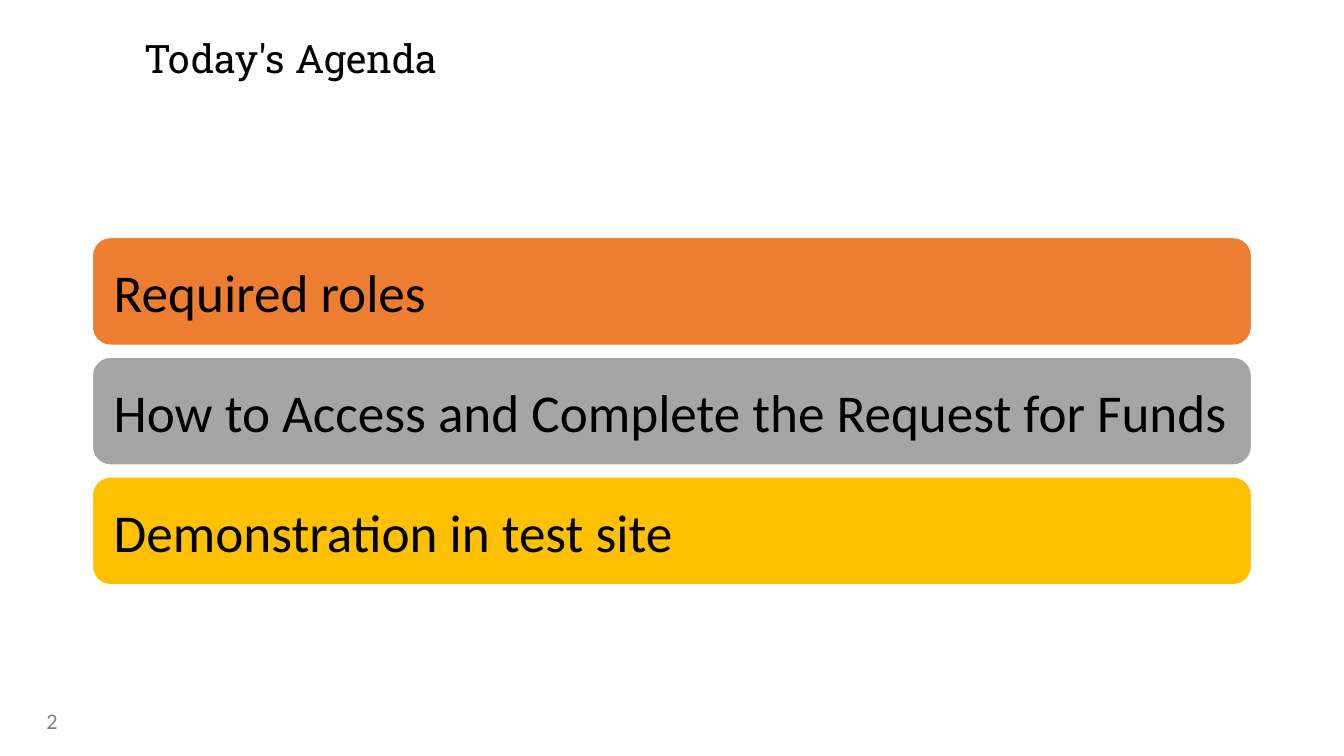
from pptx import Presentation
from pptx.dml.color import RGBColor
from pptx.enum.shapes import MSO_SHAPE
from pptx.enum.text import MSO_ANCHOR, MSO_AUTO_SIZE, PP_ALIGN
from pptx.util import Pt

ROUNDED = MSO_SHAPE.ROUNDED_RECTANGLE
TOP, MIDDLE = MSO_ANCHOR.TOP, MSO_ANCHOR.MIDDLE
LEFT = PP_ALIGN.LEFT
NO_AUTOFIT = MSO_AUTO_SIZE.NONE
TITLE_ONLY = 5

AGENDA = [
    ("Required roles", "ED7D31"),
    ("How to Access and Complete the Request for Funds", "A5A5A5"),
    ("Demonstration\u00a0in test site".replace("\u00a0", " "), "FFC000"),
]


def color(hex_value):
    return RGBColor.from_string(hex_value)


def write(frame, text, font_name, size, hex_value, anchor, inset_x, inset_y):
    """Fill a text frame with one left-aligned, formatted paragraph."""
    frame.text = text
    frame.word_wrap = True
    frame.auto_size = NO_AUTOFIT
    frame.vertical_anchor = anchor
    frame.margin_left = frame.margin_right = Pt(inset_x)
    frame.margin_top = frame.margin_bottom = Pt(inset_y)
    paragraph = frame.paragraphs[0]
    paragraph.alignment = LEFT
    font = paragraph.runs[0].font
    font.name, font.size = font_name, Pt(size)
    font.color.rgb = color(hex_value)


def add_title(slide, left, top, width, height):
    title = slide.shapes.title
    title.left, title.top = Pt(left), Pt(top)
    title.width, title.height = Pt(width), Pt(height)
    write(title.text_frame, "Today's Agenda", "Roboto Slab", 28, "000000", TOP, 0, 0)
    title.text_frame.paragraphs[0].line_spacing = 0.9


def add_agenda(slide, left, top, width, height, gap):
    """Stack the agenda bars so that they fill the box with equal gaps."""
    bar_height = (height - gap * (len(AGENDA) - 1)) / len(AGENDA)
    for index, (topic, fill) in enumerate(AGENDA):
        bar_top = top + index * (bar_height + gap)
        bar = slide.shapes.add_shape(
            ROUNDED, Pt(left), Pt(bar_top), Pt(width), Pt(bar_height))
        bar.shadow.inherit = False
        bar.fill.solid()
        bar.fill.fore_color.rgb = color(fill)
        bar.line.color.rgb = color("FFFFFF")
        bar.line.width = Pt(1)
        write(bar.text_frame, topic, "Calibri", 38, "000000", MIDDLE, 11.5, 11.5)


def add_page_number(slide, left, top, width, height):
    page_number = slide.shapes.add_textbox(Pt(left), Pt(top), Pt(width), Pt(height))
    write(page_number.text_frame, "2", "Calibri", 16, "808080", MIDDLE, 7.2, 3.6)


def main():
    deck = Presentation()
    deck.slide_width, deck.slide_height = Pt(960), Pt(540)
    slide = deck.slides.add_slide(deck.slide_layouts[TITLE_ONLY])
    add_title(slide, 103, 28, 567, 59)
    add_agenda(slide, 66, 169.7, 828, 248, 8.5)
    add_page_number(slide, 26, 500.5, 216, 29)
    deck.save("out.pptx")


if __name__ == "__main__":
    main()
